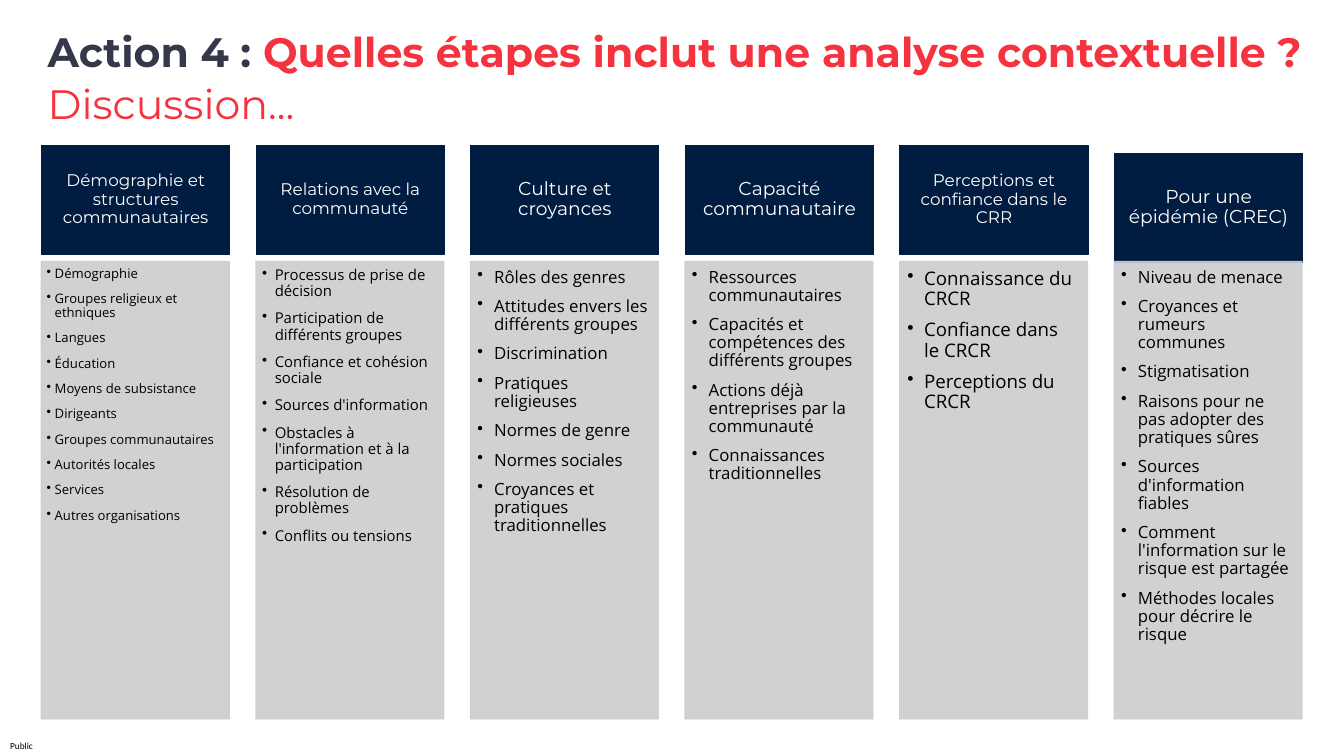
from dataclasses import dataclass

from lxml import etree
from pptx import Presentation
from pptx import util as u
from pptx.dml.color import RGBColor
from pptx.enum import shapes, text
from pptx.oxml.ns import qn

Pt = u.Pt


@dataclass(frozen=True)
class Theme:
    navy: str = "001D41"
    grey: str = "CCCDCF"
    slate: str = "33394B"
    red: str = "F5333F"
    white: str = "FFFFFF"
    black: str = "000000"
    heading: str = "Montserrat"
    body: str = "Open Sans"
    label: str = "Calibri"
    title_size: int = 44
    label_size: int = 10


LEFT, PITCH, WIDTH = 44.64, 229.9, 201.6
HEADER_TOP, HEADER_HEIGHT = 155.52, 116.64
BODY_TOP, BODY_HEIGHT = 280.1, 490.3
LAST_HEADER_DROP = 8.6

# heading, heading size, item size, bullet indent, items
COLUMNS = [
    ("Démographie et structures communautaires", 18, 14, 8.64, [
        "Démographie", "Groupes religieux et ethniques", "Langues",
        "Éducation", "Moyens de subsistance", "Dirigeants",
        "Groupes communautaires", "Autorités locales", "Services",
        "Autres organisations"]),
    ("Relations avec la communauté", 18, 16, 13.68, [
        "Processus de prise de décision", "Participation de différents groupes",
        "Confiance et cohésion sociale", "Sources d'information",
        "Obstacles à l'information et à la participation",
        "Résolution de problèmes", "Conflits ou tensions"]),
    ("Culture et croyances", 20, 18, 18, [
        "Rôles des genres", "Attitudes envers les différents groupes",
        "Discrimination", "Pratiques religieuses", "Normes de genre",
        "Normes sociales", "Croyances et pratiques traditionnelles"]),
    ("Capacité communautaire", 20, 18, 18, [
        "Ressources communautaires",
        "Capacités et compétences des différents groupes",
        "Actions déjà entreprises par la communauté",
        "Connaissances traditionnelles"]),
    ("Perceptions et confiance dans le CRR", 18, 20, 18, [
        "Connaissance du CRCR", "Confiance dans le CRCR",
        "Perceptions du CRCR"]),
    ("Pour une épidémie (CREC)", 20, 18, 18, [
        "Niveau de menace", "Croyances et rumeurs communes",
        "Stigmatisation", "Raisons pour ne pas adopter des pratiques sûres",
        "Sources d'information fiables",
        "Comment l'information sur le risque est partagée",
        "Méthodes locales pour décrire le risque"]),
]


class Deck:
    def __init__(self, theme):
        self.theme = theme
        self.prs = Presentation()
        self.prs.slide_width, self.prs.slide_height = Pt(1440), Pt(810)
        self.slide = self.prs.slides.add_slide(self.prs.slide_layouts[6])

    def run(self, p, words, size, font, color, bold=False):
        r = p.add_run()
        r.text = words
        r.font.size, r.font.name, r.font.bold = Pt(size), font, bold
        r.font.color.rgb = RGBColor.from_string(color)

    def frame(self, sp, anchor, insets):
        tf = sp.text_frame
        tf.word_wrap, tf.vertical_anchor = True, anchor
        tf.margin_left, tf.margin_top, tf.margin_right, tf.margin_bottom = map(Pt, insets)
        return tf

    def textbox(self, x, y, w, h, anchor, insets):
        sp = self.slide.shapes.add_textbox(Pt(x), Pt(y), Pt(w), Pt(h))
        return self.frame(sp, anchor, insets)

    def box(self, x, y, h, color, opacity=100):
        sp = self.slide.shapes.add_shape(
            shapes.MSO_SHAPE.RECTANGLE, Pt(x), Pt(y), Pt(WIDTH), Pt(h))
        sp.shadow.inherit = False
        sp.line.width = Pt(1)
        for fill in (sp.fill, sp.line.fill):
            fill.solid()
            fill.fore_color.rgb = RGBColor.from_string(color)
        if opacity < 100:
            for clr in sp._element.spPr.iter(qn("a:srgbClr")):
                etree.SubElement(clr, qn("a:alpha"), val=str(opacity * 1000))
        return sp

    def bullet(self, p, indent):
        pPr = p._p.get_or_add_pPr()
        pPr.set("marL", str(Pt(indent)))
        pPr.set("indent", str(-Pt(indent)))
        etree.SubElement(pPr, qn("a:buChar"), char="•")

    def title(self, lead, question, subtitle):
        t = self.theme
        tf = self.textbox(43.92, 24.48, 1396.08, 116.64,
                          text.MSO_ANCHOR.TOP, (7.2, 3.6, 7.2, 3.6))
        p = tf.paragraphs[0]
        self.run(p, lead, t.title_size, t.heading, t.slate, True)
        self.run(p, question, t.title_size, t.heading, t.red, True)
        p.space_after = Pt(3)
        p = tf.add_paragraph()
        self.run(p, subtitle, t.title_size, t.heading, t.red)
        p.space_after = Pt(3)

    def label(self, words):
        t = self.theme
        tf = self.textbox(0, 789.12, 46.08, 20.88, text.MSO_ANCHOR.MIDDLE, (0, 0, 0, 0))
        p = tf.paragraphs[0]
        p.alignment = text.PP_ALIGN.CENTER
        self.run(p, words, t.label_size, t.label, t.black)

    def header(self, x, y, words, size):
        t = self.theme
        side, edge = 0.56 * size, 0.32 * size
        sp = self.box(x, y, HEADER_HEIGHT, t.navy)
        tf = self.frame(sp, text.MSO_ANCHOR.MIDDLE, (side, edge, side, edge))
        p = tf.paragraphs[0]
        p.alignment, p.line_spacing = text.PP_ALIGN.CENTER, 0.9
        self.run(p, words, size, t.heading, t.white)

    def bullet_list(self, x, items, size, indent):
        t = self.theme
        sp = self.box(x, BODY_TOP, BODY_HEIGHT, t.grey, 90)
        insets = [ratio * size for ratio in (0.42, 0.42, 0.56, 0.63)]
        tf = self.frame(sp, text.MSO_ANCHOR.TOP, insets)
        for i, item in enumerate(items):
            p = tf.add_paragraph() if i else tf.paragraphs[0]
            self.bullet(p, indent)
            p.level, p.alignment = 1, text.PP_ALIGN.LEFT
            p.line_spacing, p.space_after = 0.9, Pt(12)
            self.run(p, item, size, t.body, t.black)


def main():
    deck = Deck(Theme())
    deck.label("Public")
    deck.title("Action 4 : ", "Quelles étapes inclut une analyse contextuelle ?",
               "Discussion...")
    for i, (heading, heading_size, size, indent, items) in enumerate(COLUMNS):
        x = LEFT + i * PITCH
        drop = LAST_HEADER_DROP if i == len(COLUMNS) - 1 else 0
        deck.header(x, HEADER_TOP + drop, heading, heading_size)
        deck.bullet_list(x - 0.5, items, size, indent)
    deck.prs.save("out.pptx")


if __name__ == "__main__":
    main()
